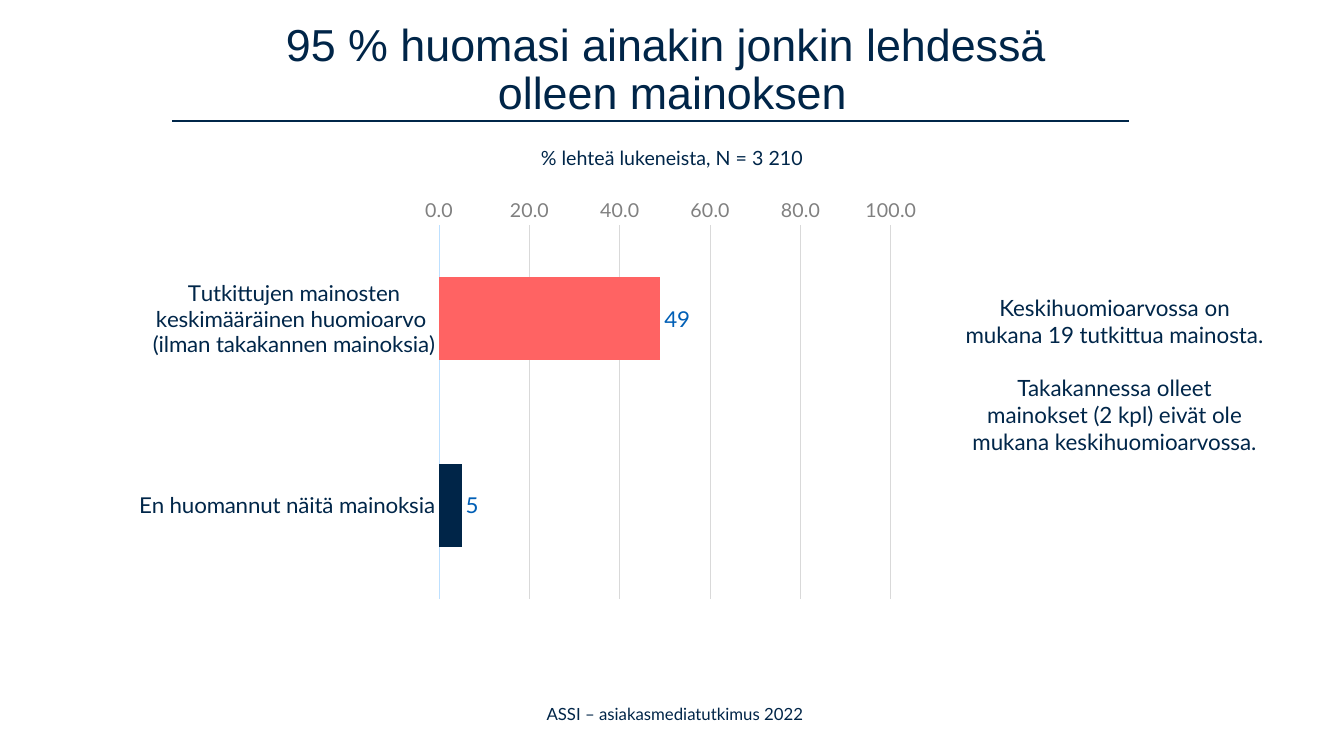
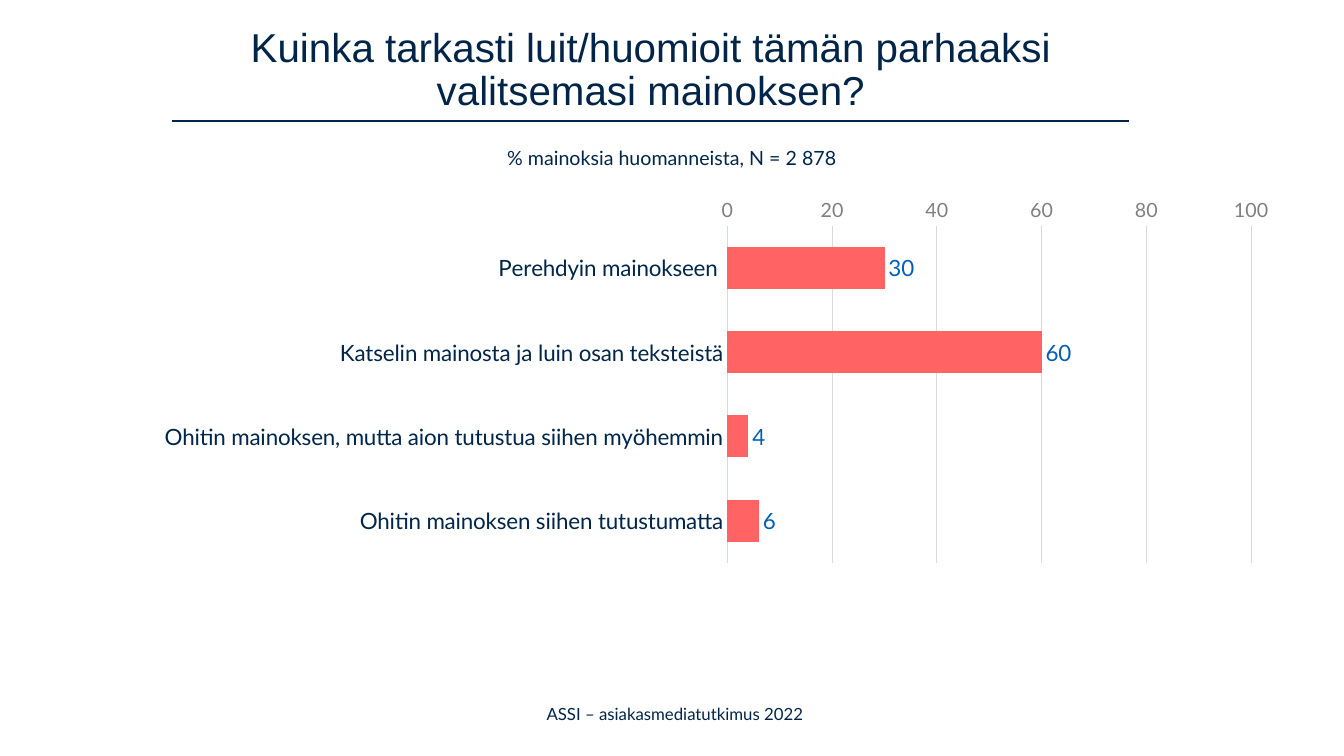
from lxml import etree
from pptx import Presentation
from pptx import util as u
from pptx.chart.data import CategoryChartData
from pptx.dml.color import RGBColor
from pptx.enum import chart as ch, shapes, text
from pptx.oxml import parse_xml
from pptx.oxml.ns import nsdecls, qn

COLORS = {"navy": "002548", "text": "002649", "coral": "FF6363", "blue": "005FB6",
          "gray": "808080", "grid": "D9D9D9", "axis": "BDE0FF"}

# Text styles
TITLE = {"name": "Arial", "size": 32, "color": "navy"}
FOOTER = {"name": "Lato", "size": 12, "color": "navy"}
SUBTITLE = {"name": "Lato", "size": 14, "color": "text"}
NOTE = {"name": "Lato", "size": 16, "color": "text"}
CATEGORY = NOTE
SCALE = {"name": "Lato", "size": 14, "color": "gray"}
VALUE = {"name": "Lato", "size": 16, "color": "blue"}
CHART = {"name": "Calibri", "size": 10, "color": "text"}

SUBTITLE_BOX = (0, 1.4, 13.33, 0.34)
FOOTER_BOX = (0.03, 6.99, 13.33, 0.18)
RULE = (1.71, 1.2, 11.2, 1.2)
FOOTER_TEXT = "ASSI – asiakasmediatutkimus 2022"


def inches(values):
    return [u.Inches(v) for v in values]


def rgb(name):
    return RGBColor.from_string(COLORS[name])


def set_font(font, style):
    for key, value in style.items():
        if key == "color":
            font.color.rgb = rgb(value)
        else:
            setattr(font, key, u.Pt(value) if key == "size" else value)


def set_line(line, color, width):
    line.color.rgb = rgb(color)
    line.width = u.Pt(width)


def add_text(s, box, paragraphs, style, gap=0, anchor=text.MSO_ANCHOR.TOP):
    """Centred text box; gap is the space between paragraphs in points."""
    tf = s.shapes.add_textbox(*inches(box)).text_frame
    tf.word_wrap = True
    tf.vertical_anchor = anchor
    for i, words in enumerate(paragraphs):
        p = tf.paragraphs[0] if i == 0 else tf.add_paragraph()
        p.alignment = text.PP_ALIGN.CENTER
        if i:
            p.space_before = u.Pt(gap)
        r = p.add_run()
        r.text = words
        set_font(r.font, style)


def add_frame(prs, title, title_box, title_size, subtitle):
    """Slide with title, rule, subtitle and footer."""
    s = prs.slides.add_slide(prs.slide_layouts[5])

    # Title
    sp = s.shapes.title
    sp.left, sp.top, sp.width, sp.height = inches(title_box)
    tf = sp.text_frame
    tf.text = title
    tf.auto_size = text.MSO_AUTO_SIZE.NONE
    tf.vertical_anchor = text.MSO_ANCHOR.MIDDLE
    p = tf.paragraphs[0]
    p.alignment = text.PP_ALIGN.CENTER
    p.line_spacing = 0.9
    for r in p.runs:
        set_font(r.font, {**TITLE, "size": title_size})

    # Rule below the title
    rule = s.shapes.add_connector(shapes.MSO_CONNECTOR.STRAIGHT, *inches(RULE))
    set_line(rule.line, "text", 1)
    etree.SubElement(rule._element.spPr, qn("a:effectLst"))

    add_text(s, SUBTITLE_BOX, [subtitle], SUBTITLE)
    add_text(s, FOOTER_BOX, [FOOTER_TEXT], FOOTER, anchor=text.MSO_ANCHOR.MIDDLE)
    return s


def set_plot_layout(chart, box):
    """Fix the inner plot area, in fractions of the chart."""
    area = chart.element.find(".//" + qn("c:plotArea"))
    for old in area.findall(qn("c:layout")):
        area.remove(old)
    sizes = "".join(f'<c:{k} val="{v}"/>' for k, v in zip("xywh", box))
    area.insert(0, parse_xml(
        f'<c:layout {nsdecls("c")}><c:manualLayout><c:layoutTarget val="inner"/>'
        f'<c:xMode val="edge"/><c:yMode val="edge"/>{sizes}'
        '</c:manualLayout></c:layout>'))


def add_bars(s, box, plot_box, bars, gap, scale_format="0", point_colors=()):
    """Horizontal bars, first category on top, scale at the bottom."""
    data = CategoryChartData()
    data.categories = list(bars)
    data.add_series("Series 1", list(bars.values()))
    chart = s.shapes.add_chart(ch.XL_CHART_TYPE.BAR_CLUSTERED, *inches(box), data).chart
    chart.has_legend = chart.has_title = False
    set_font(chart.font, CHART)
    set_plot_layout(chart, plot_box)

    # Axes
    cat, val = chart.category_axis, chart.value_axis
    for axis, style in ((cat, CATEGORY), (val, SCALE)):
        axis.major_tick_mark = axis.minor_tick_mark = ch.XL_TICK_MARK.NONE
        set_font(axis.tick_labels.font, style)
    cat.reverse_order = True
    cat.crosses = ch.XL_AXIS_CROSSES.MAXIMUM
    set_line(cat.format.line, "axis", 0.75)
    for key, value in {"minimum_scale": 0, "maximum_scale": 100, "major_unit": 20,
                       "has_major_gridlines": True}.items():
        setattr(val, key, value)
    val.format.line.fill.background()
    set_line(val.major_gridlines.format.line, "grid", 0.75)
    val.tick_labels.number_format = scale_format
    val.tick_labels.number_format_is_linked = False

    # Bars and their values
    plot = chart.plots[0]
    plot.gap_width = gap
    plot.vary_by_categories = False
    series = plot.series[0]
    series.format.fill.solid()
    series.format.fill.fore_color.rgb = rgb("coral")
    for i, color in enumerate(point_colors):
        fill = series.points[i].format.fill
        fill.solid()
        fill.fore_color.rgb = rgb(color)
    labels = series.data_labels
    for key, value in {"show_value": True, "number_format": "#,##0",
                       "number_format_is_linked": False,
                       "position": ch.XL_LABEL_POSITION.OUTSIDE_END}.items():
        setattr(labels, key, value)
    set_font(labels.font, VALUE)


def noticed_slide(prs):
    s = add_frame(prs, "95 % huomasi ainakin jonkin lehdessä \volleen mainoksen",
                  (0.92, 0.24, 11.5, 0.93), 32, "% lehteä lukeneista, N = 3 210")
    add_text(s, (9.47, 2.87, 3.17, 1.99),
             ["Keskihuomioarvossa on mukana 19 tutkittua mainosta.",
              "Takakannessa olleet mainokset (2 kpl) eivät ole mukana keskihuomioarvossa."],
             NOTE, gap=19)
    add_bars(s, (1.21, 1.96, 7.88, 4.56), (0.4, 0.04, 0.57, 0.83),
             {"Tutkittujen mainosten keskimääräinen huomioarvo \n"
              "(ilman takakannen mainoksia)": 49,
              "En huomannut näitä mainoksia": 5},
             gap=125, scale_format="0.0", point_colors=("coral", "navy"))


def attention_slide(prs):
    s = add_frame(prs, "Kuinka tarkasti luit/huomioit tämän parhaaksi valitsemasi mainoksen?",
                  (1.71, 0.24, 9.49, 0.93), 28.8, "% mainoksia huomanneista, N = 2 878")
    add_bars(s, (0.12, 1.96, 12.67, 4.34), (0.56, 0.065, 0.41, 0.77),
             {"Perehdyin mainokseen ": 30,
              "Katselin mainosta ja luin osan teksteistä": 60,
              "Ohitin mainoksen, mutta aion tutustua siihen myöhemmin": 4,
              "Ohitin mainoksen siihen tutustumatta": 6},
             gap=100)


def main():
    prs = Presentation()
    prs.slide_width, prs.slide_height = inches((13.33, 7.5))
    noticed_slide(prs)
    attention_slide(prs)
    prs.save("out.pptx")


if __name__ == "__main__":
    main()
